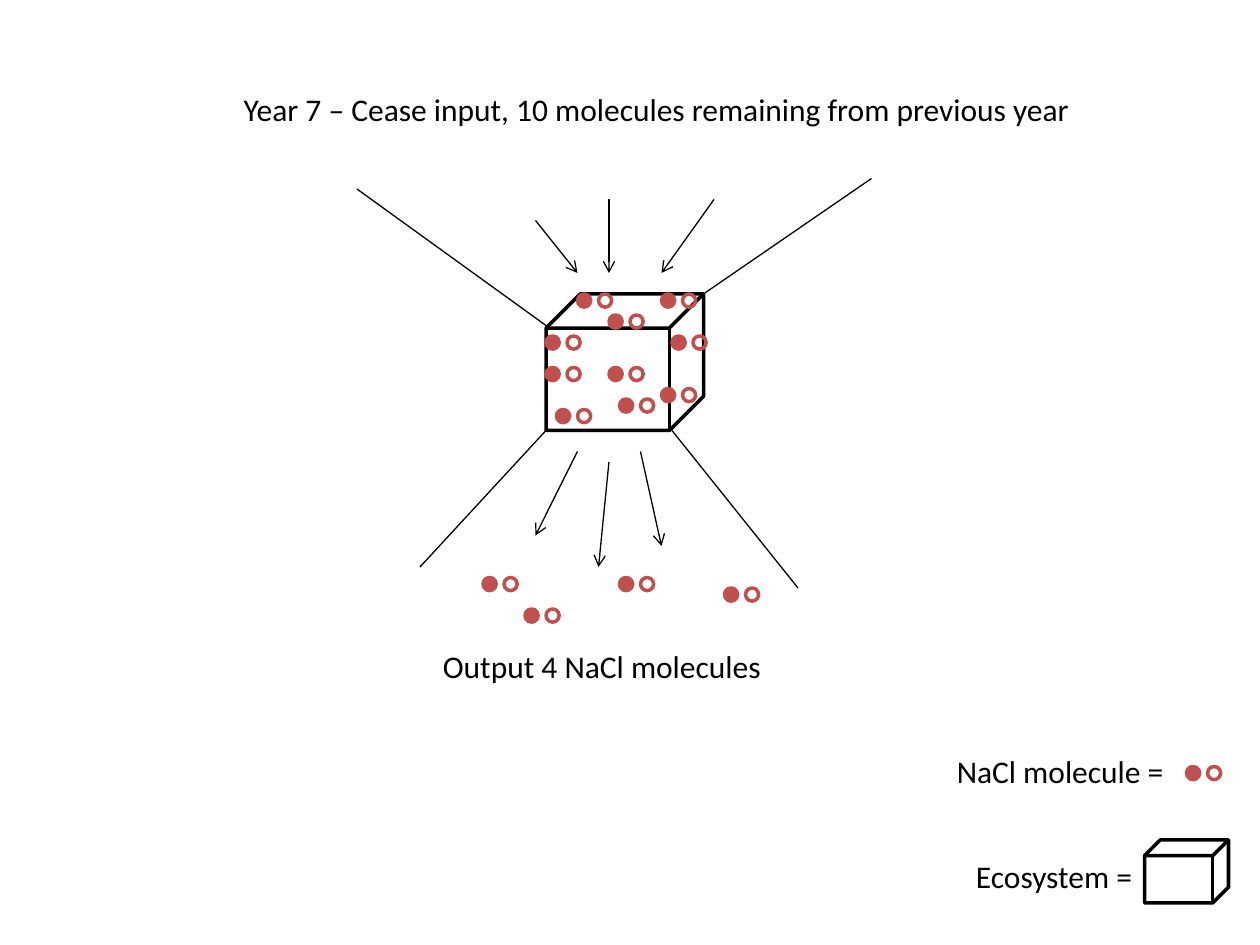
from dataclasses import dataclass

from pptx import Presentation
from pptx import util as u
from pptx.dml import color
from pptx.enum import shapes, text
from pptx.oxml import ns
from lxml import etree

PX = 9525


@dataclass(frozen=True)
class Theme:
    ink: color.RGBColor = color.RGBColor(0x00, 0x00, 0x00)
    salt: color.RGBColor = color.RGBColor(0xC0, 0x50, 0x4D)
    font: str = "Calibri"
    text_size: u.Pt = u.Pt(18)
    outline: u.Pt = u.Pt(2)
    ray: u.Pt = u.Pt(0.75)
    dot: int = 10
    dot_pitch: int = 16
    label_height: int = 38


@dataclass(frozen=True)
class Point:
    x: int
    y: int


@dataclass(frozen=True)
class Box:
    x: int
    y: int
    width: int
    height: int

    def emu(self) -> list[int]:
        return [side * PX for side in (self.x, self.y, self.width, self.height)]


@dataclass(frozen=True)
class Ray:
    start: Point
    end: Point
    arrow: bool = False


@dataclass(frozen=True)
class Label:
    wording: str
    x: int
    y: int
    width: int
    align: text.PP_ALIGN = text.PP_ALIGN.LEFT


THEME = Theme()

HEADING = Label("Year 7 – Cease input, 10 molecules remaining from previous year", 176, 64, 656)
LABELS = [
    Label("Output 4 NaCl molecules", 328, 488, 272),
    Label("NaCl molecule =", 696, 568, 200, text.PP_ALIGN.RIGHT),
    Label("Ecosystem =", 728, 648, 144, text.PP_ALIGN.RIGHT),
]
ECOSYSTEM = Box(416, 224, 120, 104)
LEGEND_ECOSYSTEM = Box(872, 640, 64, 48)

FUNNEL = [
    Ray(Point(416, 328), Point(320, 432)),
    Ray(Point(512, 328), Point(608, 448)),
    Ray(Point(416, 248), Point(272, 144)),
    Ray(Point(536, 224), Point(664, 136)),
]
INPUTS = [
    Ray(Point(408, 168), Point(440, 208), True),
    Ray(Point(464, 152), Point(464, 208), True),
    Ray(Point(544, 152), Point(504, 208), True),
]
OUTPUTS = [
    Ray(Point(440, 344), Point(408, 408), True),
    Ray(Point(488, 344), Point(504, 416), True),
    Ray(Point(464, 352), Point(456, 432), True),
]

REMAINING = [
    Point(440, 224), Point(504, 224), Point(464, 240), Point(416, 256), Point(512, 256),
    Point(416, 280), Point(464, 280), Point(504, 296), Point(472, 304), Point(424, 312),
]
RELEASED = [Point(368, 440), Point(472, 440), Point(552, 448), Point(400, 464)]
LEGEND_MOLECULE = Point(904, 584)


def draw_outline(parent, preset: shapes.MSO_SHAPE, box: Box, ink: color.RGBColor):
    outline = parent.add_shape(preset, *box.emu())
    outline.shadow.inherit = False
    outline.fill.background()
    outline.line.color.rgb = ink
    outline.line.width = THEME.outline
    return outline


def draw_molecule(slide, at: Point) -> None:
    molecule = slide.shapes.add_group_shape().shapes
    sodium, chloride = (
        draw_outline(molecule, shapes.MSO_SHAPE.OVAL,
                     Box(at.x + step * THEME.dot_pitch, at.y, THEME.dot, THEME.dot), THEME.salt)
        for step in range(2)
    )
    sodium.fill.solid()
    sodium.fill.fore_color.rgb = THEME.salt


def draw_ray(slide, ray: Ray) -> None:
    ends = [n * PX for n in (ray.start.x, ray.start.y, ray.end.x, ray.end.y)]
    line = slide.shapes.add_connector(shapes.MSO_CONNECTOR.STRAIGHT, *ends)
    line.line.color.rgb = THEME.ink
    line.line.width = THEME.ray
    if ray.arrow:
        etree.SubElement(line.line._get_or_add_ln(), ns.qn("a:tailEnd"), type="arrow")
    etree.SubElement(line._element.spPr, ns.qn("a:effectLst"))


def write_label(holder, label: Label) -> None:
    box = Box(label.x, label.y, label.width, THEME.label_height)
    holder.left, holder.top, holder.width, holder.height = box.emu()
    frame = holder.text_frame
    frame.text = label.wording
    frame.word_wrap = True
    frame.auto_size = text.MSO_AUTO_SIZE.SHAPE_TO_FIT_TEXT
    frame.vertical_anchor = text.MSO_ANCHOR.TOP
    paragraph = frame.paragraphs[0]
    paragraph.alignment = label.align
    for run in paragraph.runs:
        run.font.name = THEME.font
        run.font.size = THEME.text_size
        run.font.color.rgb = THEME.ink


def main() -> None:
    deck = Presentation()
    deck.slide_width, deck.slide_height = 960 * PX, 720 * PX
    slide = deck.slides.add_slide(deck.slide_layouts[5])

    write_label(slide.shapes.title, HEADING)
    for cube in (ECOSYSTEM, LEGEND_ECOSYSTEM):
        draw_outline(slide.shapes, shapes.MSO_SHAPE.CUBE, cube, THEME.ink)
    for ray in FUNNEL + INPUTS + OUTPUTS:
        draw_ray(slide, ray)
    for place in REMAINING + RELEASED + [LEGEND_MOLECULE]:
        draw_molecule(slide, place)
    for label in LABELS:
        write_label(slide.shapes.add_textbox(0, 0, 0, 0), label)

    deck.save("out.pptx")


if __name__ == "__main__":
    main()
